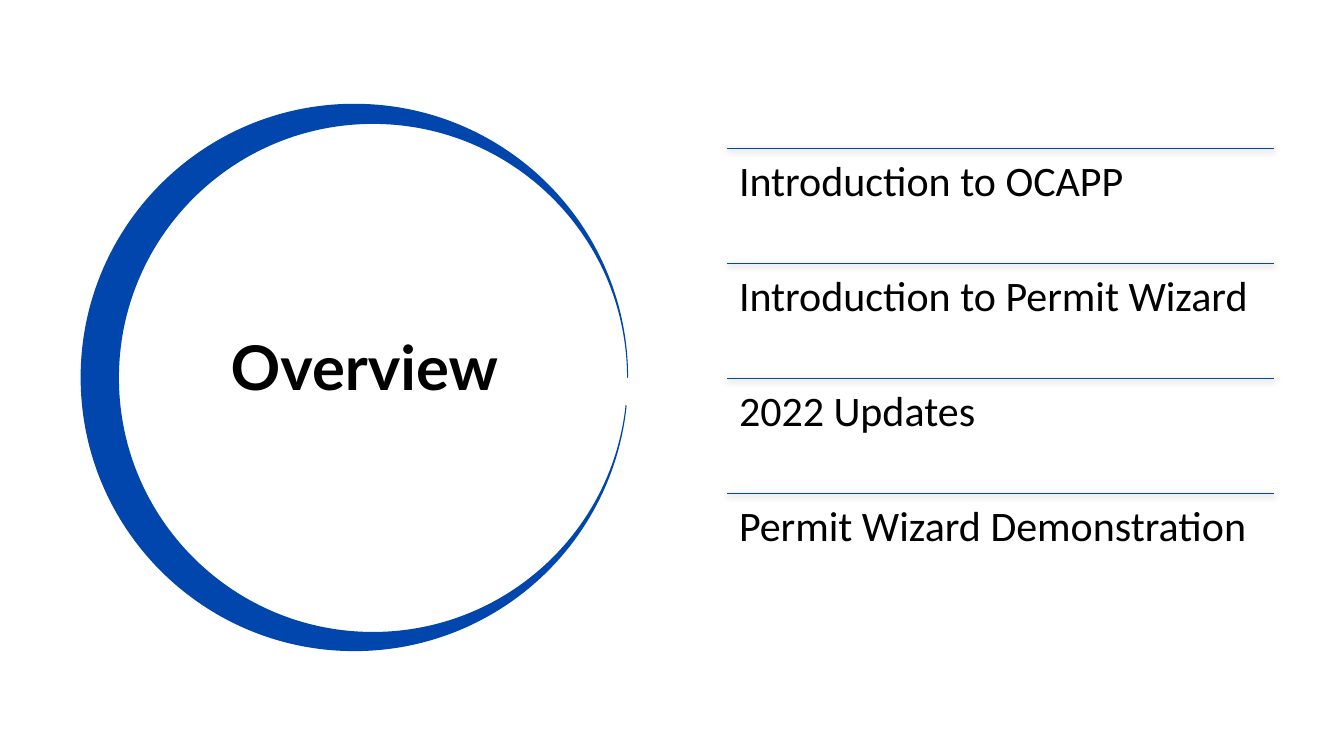
from math import cos, radians, sin, tan

from lxml.etree import SubElement
from pptx import Presentation
from pptx.dml.color import RGBColor
from pptx.enum.shapes import MSO_CONNECTOR
from pptx.enum.text import MSO_ANCHOR, MSO_AUTO_SIZE, PP_ALIGN
from pptx.oxml.ns import qn
from pptx.util import Inches, Pt

BLUE = RGBColor(0x00, 0x46, 0xAD)
BLACK = RGBColor(0x00, 0x00, 0x00)

TOPICS = [
    "Introduction to OCAPP",
    "Introduction to Permit Wizard",
    "2022 Updates",
    "Permit Wizard Demonstration",
]
TOPIC_LEFT, TOPIC_TOP, TOPIC_WIDTH, TOPIC_HEIGHT = 7.21, 1.47, 5.43, 1.14


def arc_curves(left, top, diameter, angles):
    """Return the arc's start point and a list of (control, control, end) curves."""
    radius = diameter / 2

    def point(angle, handle=0):
        x = cos(radians(angle)) - handle * sin(radians(angle))
        y = sin(radians(angle)) + handle * cos(radians(angle))
        return Inches(left + radius + radius * x), Inches(top + radius + radius * y)

    curves = []
    for begin, end in zip(angles, angles[1:]):
        handle = 4 / 3 * tan(radians(end - begin) / 4)
        curves.append((point(begin, handle), point(end, -handle), point(end)))
    return point(angles[0]), curves


def add_soft_shadow(connector):
    effects = SubElement(connector._element.spPr, qn("a:effectLst"))
    shadow = SubElement(effects, qn("a:outerShdw"), blurRad=str(Pt(4.5)),
                        dist=str(Pt(1.5)), dir="5400000", rotWithShape="0")
    color = SubElement(shadow, qn("a:srgbClr"), val="000000")
    SubElement(color, qn("a:alpha"), val="63000")


presentation = Presentation()
presentation.slide_width = Inches(13.33)
presentation.slide_height = Inches(7.5)
slide = presentation.slides.add_slide(presentation.slide_layouts[5])

# Crescent: outer circle one way round, inner circle back, meeting at the right
outer_start, outer_curves = arc_curves(0.8, 1.03, 5.43, [6, 90, 180, 270, 360])
inner_start, inner_curves = arc_curves(1.18, 1.23, 5.04, [360, 270, 180, 90, 6])
segments = outer_curves + [(inner_start,)] + inner_curves
builder = slide.shapes.build_freeform(*outer_start)
builder.add_line_segments([segment[-1] for segment in segments], close=True)
crescent = builder.convert_to_shape()
crescent.shadow.inherit = False
crescent.fill.solid()
crescent.fill.fore_color.rgb = BLUE
crescent.line.fill.background()

# Bend the straight segments into curves
for line, segment in zip(list(crescent._element.iter(qn("a:lnTo"))), segments):
    if len(segment) == 3:
        curve = line.makeelement(qn("a:cubicBezTo"))
        for x, y in segment:
            SubElement(curve, qn("a:pt"), x=str(x - crescent.left), y=str(y - crescent.top))
        line.getparent().replace(line, curve)

# Title inside the crescent, brought in front of it
title = slide.shapes.title
crescent._element.addnext(title._element)
title.left, title.top = Inches(0.9), Inches(3.21)
title.width, title.height = Inches(5.43), Inches(1.07)
title.text_frame.text = "Overview"
title.text_frame.auto_size = MSO_AUTO_SIZE.NONE
title.text_frame.vertical_anchor = MSO_ANCHOR.TOP
title_paragraph = title.text_frame.paragraphs[0]
title_paragraph.alignment = PP_ALIGN.CENTER
for name, value in {"name": "Lato", "size": Pt(44), "bold": True}.items():
    setattr(title_paragraph.font, name, value)
title_paragraph.font.color.rgb = BLACK

# Topics, each under a thin rule
for index, topic in enumerate(TOPICS):
    left = Inches(TOPIC_LEFT)
    top = Inches(TOPIC_TOP + index * TOPIC_HEIGHT)
    width = Inches(TOPIC_WIDTH)

    rule = slide.shapes.add_connector(MSO_CONNECTOR.STRAIGHT, left, top, left + width, top)
    rule.line.color.rgb = BLUE
    rule.line.width = Pt(0.5)
    add_soft_shadow(rule)

    box = slide.shapes.add_textbox(left, top, width, Inches(TOPIC_HEIGHT))
    frame = box.text_frame
    frame.word_wrap = True
    for side in ("left", "top", "right", "bottom"):
        setattr(frame, f"margin_{side}", Inches(0.12))
    paragraph = frame.paragraphs[0]
    paragraph.text = topic
    paragraph.line_spacing = 0.9
    paragraph.font.name = "Calibri"
    paragraph.font.size = Pt(30)
    paragraph.font.color.rgb = BLACK

presentation.save("out.pptx")
